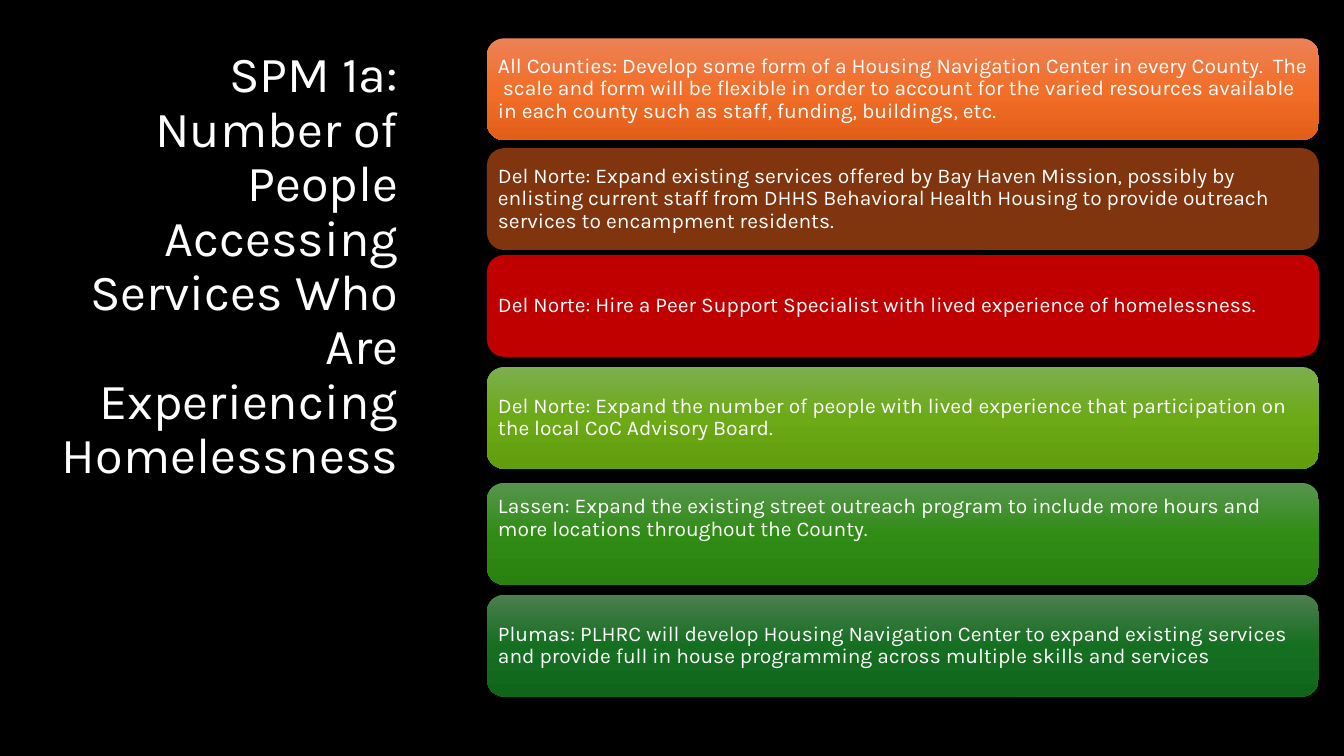
from copy import deepcopy

from pptx import Presentation
from pptx.dml.color import RGBColor
from pptx.enum.shapes import MSO_SHAPE
from pptx.enum.text import MSO_ANCHOR, PP_ALIGN
from pptx.oxml.ns import qn
from pptx.util import Pt

PX = 9144  # EMU in one px, 100 px to the inch
ROUND = MSO_SHAPE.ROUNDED_RECTANGLE
MIDDLE, BOTTOM = MSO_ANCHOR.MIDDLE, MSO_ANCHOR.BOTTOM
LEFT, RIGHT = PP_ALIGN.LEFT, PP_ALIGN.RIGHT

TITLE = "SPM 1a: Number of People Accessing Services Who Are Experiencing Homelessness"

# top, fill colours from top to bottom, text, bottom inset
CARDS = [
    (38, ["ED8257", "F26E29", "E25F1A"],
     "All Counties: Develop some form of a Housing Navigation Center in every County.  "
     "The  scale and form will be flexible in order to account for the varied resources "
     "available in each county such as staff, funding, buildings, etc.", 6),
    (147, ["80350E"],
     "Del Norte: Expand existing services offered by Bay Haven Mission, possibly by "
     "enlisting current staff from DHHS Behavioral Health Housing to provide outreach "
     "services to encampment residents.", 6),
    (253, ["C00000"],
     "Del Norte: Hire a Peer Support Specialist with lived experience of homelessness.", 6),
    (364, ["7DAF4E", "6CAA17", "619D0E"],
     "Del Norte: Expand the number of people with lived experience that participation on "
     "the local CoC Advisory Board.", 6),
    (479, ["57954E", "318C16", "29810F"],
     "Lassen: Expand the existing street outreach program to include more hours and "
     "more locations throughout the County.", 37),
    (590, ["4D7E50", "156F21", "0F661B"],
     "Plumas: PLHRC will develop Housing Navigation Center to expand existing services "
     "and provide full in house programming across multiple skills and services", 6),
]


def px(*vals):
    return [val * PX for val in vals]


def color(code):
    return RGBColor.from_string(code)


def write(frame, text, size, font, ink, align=LEFT, anchor=MIDDLE, inset=(6, 6, 6, 6)):
    """Fill a text frame; inset is left, top, right, bottom in px."""
    frame.word_wrap = True
    frame.vertical_anchor = anchor
    (frame.margin_left, frame.margin_top,
     frame.margin_right, frame.margin_bottom) = px(*inset)
    par = frame.paragraphs[0]
    par.alignment = align
    par.line_spacing = 0.9
    run = par.add_run()
    run.text = text
    run.font.size = Pt(size)
    run.font.name = font
    run.font.color.rgb = color(ink)


def shade(shape, codes):
    """Fill with one colour, or with three as a gradient running down."""
    fill = shape.fill
    if len(codes) == 1:
        fill.solid()
        fill.fore_color.rgb = color(codes[0])
        return
    fill.gradient()
    fill.gradient_angle = 270
    stops = shape._element.spPr.find(qn("a:gradFill")).find(qn("a:gsLst"))
    stops.insert(1, deepcopy(stops[0]))
    for num, (stop, code) in enumerate(zip(fill.gradient_stops, codes)):
        stop.position = num / 2
        stop.color.rgb = color(code)


class Deck:
    font = "Karla"
    ink = "FFFFFF"
    back = "000000"

    def __init__(self, wide, high):
        self.prs = Presentation()
        self.prs.slide_width, self.prs.slide_height = px(wide, high)
        self.slide = self.prs.slides.add_slide(self.prs.slide_layouts[6])
        fill = self.slide.background.fill
        fill.solid()
        fill.fore_color.rgb = color(self.back)

    def title(self, text, box):
        shape = self.slide.shapes.add_textbox(*px(*box))
        write(shape.text_frame, text, 36, self.font, self.ink,
              align=RIGHT, anchor=BOTTOM, inset=(10, 5, 10, 34))

    def card(self, text, box, codes, foot):
        shape = self.slide.shapes.add_shape(ROUND, *px(*box))
        shape.shadow.inherit = False
        shape.line.fill.background()
        shade(shape, codes)
        write(shape.text_frame, text, 15, self.font, self.ink, inset=(6, 6, 6, foot))

    def save(self):
        self.prs.save("out.pptx")


def main():
    deck = Deck(1333, 750)
    deck.title(TITLE, (39, 121, 366, 394))
    for top, codes, text, foot in CARDS:
        deck.card(text, (483, top, 825, 101), codes, foot)
    deck.save()


if __name__ == "__main__":
    main()
